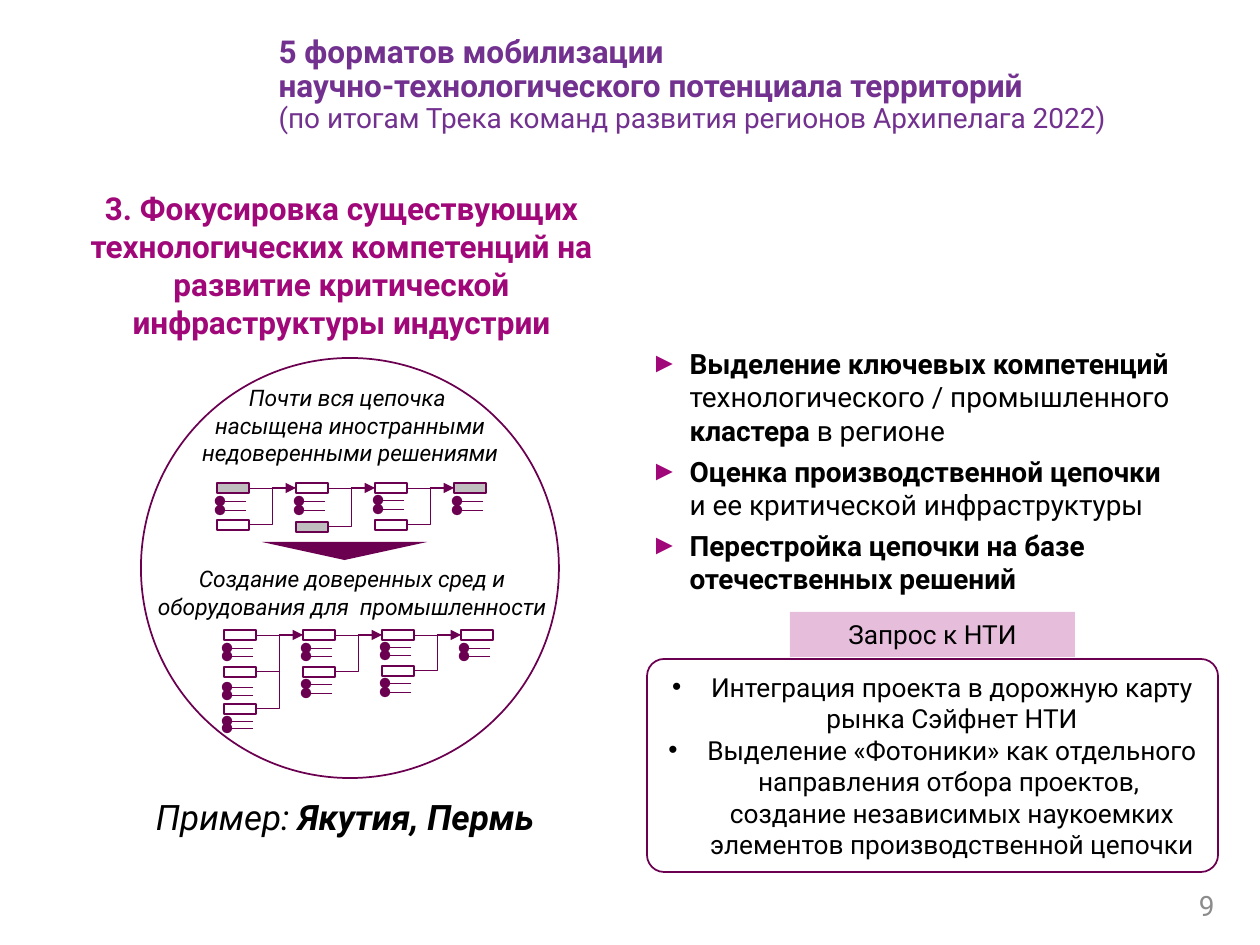
from itertools import pairwise
from lxml.etree import SubElement
from pptx import Presentation
from pptx.dml.color import RGBColor as RGB
from pptx.enum.shapes import MSO_CONNECTOR as Link, MSO_SHAPE as Shape
from pptx.enum.text import MSO_ANCHOR as Anchor, MSO_AUTO_SIZE as Fit, PP_ALIGN as Align
from pptx.oxml.ns import qn
from pptx.util import Emu, Pt

DPI = 126
HEX = {"plum": "6C0050", "pink": "A00778", "violet": "72318F", "black": "000000",
       "white": "FFFFFF", "gray": "BFBFBF", "dim": "8C8C8C"}
INK = {name: RGB.from_string(code) for name, code in HEX.items()}


def px(*nums):
    """Turn px lengths into EMU."""
    return [Emu(round(n * 914400 / DPI)) for n in nums]


def wire(shapes, kind, ends, head=None, tail=None):
    """Draw a thin plum connector with optional line ends."""
    line = shapes.add_connector(kind, *px(*ends))
    line.line.color.rgb = INK["plum"]
    line.line.width = Pt(0.5)
    props = line._element.spPr
    for tag, form in (("a:headEnd", head), ("a:tailEnd", tail)):
        if form:
            SubElement(props.find(qn("a:ln")), qn(tag), type=form, w="med", len="med")
    SubElement(props, qn("a:effectLst"))
    return line


prs = Presentation()
prs.slide_width, prs.slide_height = px(1260, 945)
slide = prs.slides.add_slide(prs.slide_layouts[1])
title, body = slide.placeholders
for holder, place in ((title, (266, 20, 961, 130)), (body, (638, 340, 557, 265))):
    holder.left, holder.top, holder.width, holder.height = px(*place)
    holder.text_frame.auto_size = Fit.NONE
title.text_frame.vertical_anchor = Anchor.MIDDLE

# Circle with the two production chains
group = slide.shapes.add_group_shape().shapes
ring = group.add_shape(Shape.OVAL, *px(141, 358, 418, 420))
arrow = group.add_shape(Shape.ISOSCELES_TRIANGLE, *px(262, 542, 165, 18))
arrow.rotation = 180
arrow.fill.solid()
arrow.fill.fore_color.rgb = INK["plum"]
arrow.line.fill.background()
arrow.shadow.inherit = False

STEP, WIDE, HIGH, PIN = 79, 32, 10, 26
# Each column lists its boxes: drop from the chain's top, fill, drops of the pins
chains = [
    (217, 483, [
        [(0, "gray", (18, 27)), (37, "white", ())],
        [(0, "white", (18, 27)), (39, "gray", ())],
        [(0, "white", (17, 26)), (37, "white", ())],
        [(0, "gray", (18, 27))]]),
    (224, 630, [
        [(0, "white", (18, 26)), (37, "white", (57, 65)), (74, "white", (91, 98))],
        [(0, "white", (18, 26)), (37, "white", (54, 63))],
        [(0, "white", (17, 25)), (36, "white", (53, 62))],
        [(0, "white", (18, 26))]]),
]
for left, top, cols in chains:
    grid = []
    for num, col in enumerate(cols):
        x = left + num * STEP
        grid.append([])
        for drop, tint, pins in col:
            box = group.add_shape(Shape.RECTANGLE, *px(x, top + drop, WIDE, HIGH))
            box.fill.solid()
            box.fill.fore_color.rgb = INK[tint]
            box.line.color.rgb = INK["plum"]
            box.line.width = Pt(1)
            box.shadow.inherit = False
            grid[-1].append((box, top + drop + HIGH / 2))
            for pin in pins:
                y = top + pin
                wire(group, Link.STRAIGHT, (x + 3, y, x + 3 + PIN, y), head="oval")
    for num, (col, after) in enumerate(pairwise(grid)):
        x = left + num * STEP
        goal, end = after[0]
        for row, (box, y) in enumerate(col):
            kind, tip = (Link.ELBOW, None) if row else (Link.STRAIGHT, "triangle")
            line = wire(group, kind, (x + WIDE, y, x + STEP, end), tail=tip)
            line.begin_connect(box, 3)
            line.end_connect(goal, 1)

# Request to the initiative
label = slide.shapes.add_shape(Shape.RECTANGLE, *px(790, 612, 285, 45))
label.fill.solid()
label.fill.fore_color.rgb = INK["pink"]
shade = label._element.spPr.find(qn("a:solidFill"))[0]
SubElement(shade, qn("a:alpha"), val="26000")
label.line.fill.background()
label.shadow.inherit = False
panel = slide.shapes.add_shape(Shape.ROUNDED_RECTANGLE, *px(647, 659, 571, 213))
panel.adjustments[0] = 0.08
panel.text_frame.margin_left = panel.text_frame.margin_right = 0
for shape in (ring, panel):
    shape.fill.background()
    shape.line.color.rgb = INK["plum"]
    shape.line.width = Pt(1)
    shape.shadow.inherit = False

head = slide.shapes.add_textbox(*px(48, 183, 587, 165))
past = group.add_textbox(*px(169, 378, 362, 96))
goal = group.add_textbox(*px(125, 559, 454, 68))
case = slide.shapes.add_textbox(*px(76, 789, 538, 55))
page = slide.shapes.add_textbox(*px(944, 880, 283, 50))
page.text_frame.vertical_anchor = Anchor.MIDDLE

# Shape, size, colour, alignment, bullet, paragraphs of (text, style) runs;
# a run may bring its own size
texts = [
    (title, 18, "violet", Align.LEFT, None, [
        [("5 форматов мобилизации \vнаучно-технологического потенциала территорий\v", "b"),
         ("(по итогам Трека команд развития регионов Архипелага 2022)", "", 16)]]),
    (head, 18, "pink", Align.CENTER, None, [
        [("3. Фокусировка существующих технологических компетенций на "
          "развитие критической инфраструктуры индустрии", "b")]]),
    (past, 13, "black", Align.CENTER, None, [
        [("Почти вся цепочка \vнасыщена иностранными недоверенными решениями", "i")]]),
    (goal, 13, "black", Align.CENTER, None, [
        [("Создание доверенных сред и оборудования для  промышленности", "i")]]),
    (case, 20, "black", Align.CENTER, None, [
        [("Пример: ", "i"), ("Якутия, Пермь", "bi")]]),
    (body, 16, "black", Align.LEFT, "►", [
        [("Выделение ключевых компетенций ", "b"),
         ("технологического / промышленного ", ""),
         ("кластера", "b"), (" в регионе", "")],
        [("Оценка производственной цепочки ", "b"),
         ("и ее критической инфраструктуры", "")],
        [("Перестройка цепочки на базе отечественных решений", "b")]]),
    (label, 15, "black", Align.CENTER, None, [[("Запрос к НТИ", "")]]),
    (panel, 15, "black", Align.CENTER, "•", [
        [("Интеграция проекта в дорожную карту рынка Сэйфнет НТИ", "")],
        [("Выделение «Фотоники» как отдельного направления отбора проектов, "
          "\vсоздание независимых наукоемких элементов производственной цепочки", "")]]),
    (page, 16, "dim", Align.RIGHT, None, [[("9", "")]]),
]
for shape, size, tint, align, mark, paras in texts:
    frame = shape.text_frame
    frame.word_wrap = True
    for num, runs in enumerate(paras):
        para = frame.add_paragraph() if num else frame.paragraphs[0]
        para.alignment = align
        if mark:
            props = para._p.get_or_add_pPr()
            inset = px(39)[0]
            props.set("marL", str(inset))
            props.set("indent", str(-inset))
            if shape is body:
                color = SubElement(props, qn("a:buClr"))
                SubElement(color, qn("a:srgbClr"), val=HEX["pink"])
            SubElement(props, qn("a:buFont"), typeface="Arial")
            SubElement(props, qn("a:buChar"), char=mark)
        if shape is body:
            tabs = SubElement(props, qn("a:tabLst"))
            SubElement(tabs, qn("a:tab"), pos=str(px(74)[0]), algn="l")
            para.space_before = Pt(2 if num else 0)
            para.space_after = Pt(2)
        if shape is title:
            para.line_spacing = 0.9
        for text, style, *own in runs:
            for cut, part in enumerate(text.split("\v")):
                if cut:
                    para.add_line_break()
                if part:
                    run = para.add_run()
                    run.text = part
                    font = run.font
                    font.name, font.size = "Roboto", Pt(own[0] if own else size)
                    font.bold, font.italic = "b" in style, "i" in style
                    font.color.rgb = INK[tint]
        for gap in para._p.findall(qn("a:br")):
            SubElement(gap, qn("a:rPr"), sz=str(size * 100))

prs.save("out.pptx")
